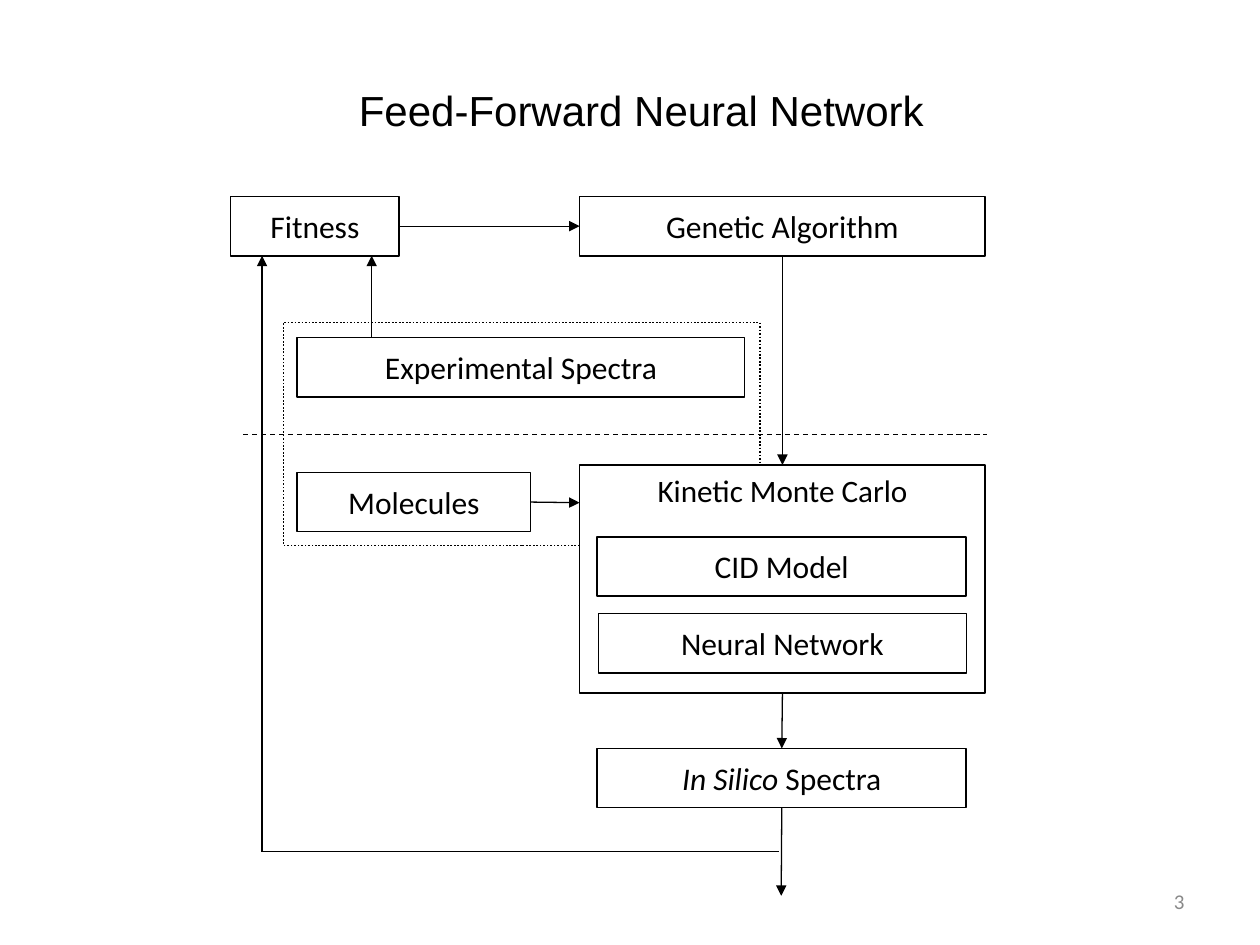
from pptx import Presentation
from pptx.dml.color import RGBColor
from pptx.enum.dml import MSO_LINE
from pptx.enum.shapes import MSO_CONNECTOR, MSO_SHAPE
from pptx.enum.text import MSO_ANCHOR, MSO_AUTO_SIZE, PP_ALIGN
from pptx.oxml.ns import qn
from pptx.util import Inches, Pt
from lxml.etree import SubElement

COLORS = {"ink": "000000", "paper": "FFFFFF", "number": "898989"}
BOX_HEIGHT = 0.47
TOP, LEFT, BOTTOM, RIGHT = range(4)


def color(name):
    """Return the named colour."""
    return RGBColor.from_string(COLORS[name])


def format_runs(paragraph, size, font="Calibri", ink="ink"):
    """Give every run of a paragraph its font, size and colour."""
    for run in paragraph.runs:
        run.font.name = font
        run.font.size = Pt(size)
        run.font.color.rgb = color(ink)


def add_box(slide, left, top, width, height=BOX_HEIGHT, text="", size=18,
            anchor=MSO_ANCHOR.MIDDLE, fill=None, dash=None, italic=""):
    """Add an outlined rectangle with a centred label after an optional italic part."""
    shape = slide.shapes.add_shape(MSO_SHAPE.RECTANGLE, Inches(left), Inches(top),
                                   Inches(width), Inches(height))
    shape.shadow.inherit = False
    if fill:
        shape.fill.solid()
        shape.fill.fore_color.rgb = color(fill)
    else:
        shape.fill.background()
    shape.line.color.rgb = color("ink")
    shape.line.width = Pt(1)
    if dash:
        shape.line.dash_style = dash
    shape.text_frame.vertical_anchor = anchor
    paragraph = shape.text_frame.paragraphs[0]
    paragraph.alignment = PP_ALIGN.CENTER
    if italic:
        run = paragraph.add_run()
        run.text = italic
        run.font.italic = True
    if text:
        paragraph.add_run().text = text
    format_runs(paragraph, size)
    return shape


def add_line(slide, start, end, arrow=True, dash=None, begin=None, finish=None):
    """Add a straight line, joined to (shape, side) pairs where they are given."""
    connector = slide.shapes.add_connector(
        MSO_CONNECTOR.STRAIGHT, *(Inches(value) for value in (*start, *end)))
    if begin:
        connector.begin_connect(*begin)
    if finish:
        connector.end_connect(*finish)
    connector.line.color.rgb = color("ink")
    connector.line.width = Pt(0.75)
    if dash:
        connector.line.dash_style = dash
    if arrow:
        SubElement(connector.line._get_or_add_ln(), qn("a:tailEnd"), type="triangle")
    SubElement(connector._element.spPr, qn("a:effectLst"))


def add_text(slide, left, top, width, height, text, size, font="Calibri",
             ink="ink", align=PP_ALIGN.LEFT, anchor=MSO_ANCHOR.TOP, wrap=True):
    """Add a one-paragraph text box."""
    shape = slide.shapes.add_textbox(Inches(left), Inches(top), Inches(width), Inches(height))
    text_frame = shape.text_frame
    text_frame.text = text
    text_frame.word_wrap = wrap
    text_frame.vertical_anchor = anchor
    if not wrap:
        text_frame.auto_size = MSO_AUTO_SIZE.SHAPE_TO_FIT_TEXT
    text_frame.paragraphs[0].alignment = align
    format_runs(text_frame.paragraphs[0], size, font, ink)


def main():
    """Build the neural network flow chart slide."""
    presentation = Presentation()
    presentation.slide_width = Inches(10)
    presentation.slide_height = Inches(7.5)
    slide = presentation.slides.add_slide(presentation.slide_layouts[6])

    add_text(slide, 7.17, 6.95, 2.33, 0.4, "3", 12, ink="number",
             align=PP_ALIGN.RIGHT, anchor=MSO_ANCHOR.MIDDLE)
    add_box(slide, 2.25, 2.56, 3.78, 1.77, dash=MSO_LINE.ROUND_DOT)
    genetic = add_box(slide, 4.6, 1.56, 3.22, text="Genetic Algorithm")
    in_silico = add_box(slide, 4.74, 5.94, 2.93, text=" Spectra", italic="In Silico")
    fitness = add_box(slide, 1.83, 1.56, 1.34, text="Fitness")
    add_box(slide, 2.36, 2.68, 3.55, text="Experimental Spectra")
    molecules = add_box(slide, 2.36, 3.75, 1.85, text="Molecules")
    kinetic = add_box(slide, 4.6, 3.69, 3.22, 1.81, "Kinetic Monte Carlo", 17.8,
                      MSO_ANCHOR.TOP, "paper")
    add_box(slide, 4.75, 4.87, 2.92, text="Neural Network", fill="paper")
    add_box(slide, 4.74, 4.26, 2.93, text="CID Model", fill="paper")

    add_line(slide, (6.2, 5.5), (6.2, 5.94), begin=(kinetic, BOTTOM), finish=(in_silico, TOP))
    add_line(slide, (6.2, 6.41), (6.2, 7.11), begin=(in_silico, BOTTOM))
    add_line(slide, (2.95, 2.68), (2.95, 2.03))
    add_line(slide, (3.17, 1.8), (4.6, 1.8), begin=(fitness, RIGHT), finish=(genetic, LEFT))
    add_line(slide, (6.2, 2.03), (6.2, 3.69), begin=(genetic, BOTTOM), finish=(kinetic, TOP))
    add_line(slide, (4.21, 3.99), (4.6, 3.99), begin=(molecules, RIGHT))
    add_line(slide, (6.18, 6.76), (2.08, 6.76), arrow=False)
    add_line(slide, (2.08, 6.76), (2.08, 2.03))
    add_line(slide, (1.93, 3.45), (7.83, 3.45), arrow=False, dash=MSO_LINE.DASH)

    add_text(slide, 2.75, 0.62, 4.73, 0.51, "Feed-Forward Neural Network", 24,
             font="Arial", wrap=False)
    presentation.save("out.pptx")


if __name__ == "__main__":
    main()
